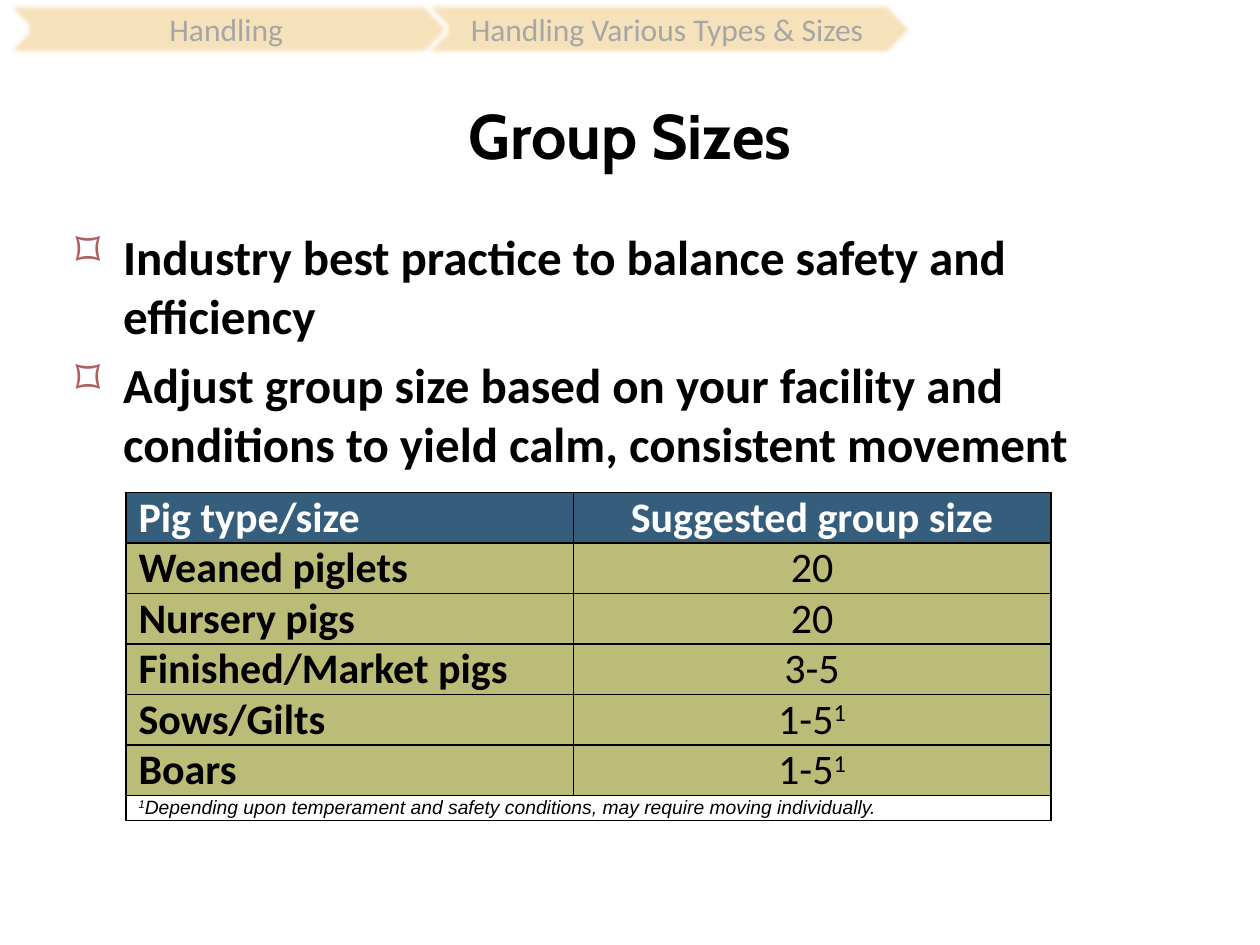
from lxml.etree import SubElement
from pptx import Presentation
from pptx.dml.color import RGBColor
from pptx.enum.shapes import MSO_SHAPE
from pptx.enum.text import MSO_ANCHOR, PP_ALIGN
from pptx.oxml.ns import qn
from pptx.util import Inches, Pt

COLORS = {
    "text": "000000",
    "header_text": "FFFFFF",
    "header": "355E7C",
    "body": "BBBC77",
    "note": "FFFFFF",
    "border": "000000",
    "bullet": "AF5F5D",
    "chevron": "F7E3BB",
    "chevron_text": "A6A6A6",
}

CHEVRONS = [
    ("Handling", 0, 3.59),
    ("Handling Various Types & Sizes", 3.33, 3.93),
]
BULLETS = [
    "Industry best practice to balance safety and efficiency",
    "Adjust group size based on your facility and "
    "conditions to yield calm, consistent movement",
]
HEADERS = ("Pig type/size", "Suggested group size")
GROUP_SIZES = [
    ("Weaned piglets", "20", ""),
    ("Nursery pigs", "20", ""),
    ("Finished/Market pigs", "3-5", ""),
    ("Sows/Gilts", "1-5", "1"),
    ("Boars", "1-5", "1"),
]
NOTE = "Depending upon temperament and safety conditions, may require moving individually."
COLUMN_WIDTHS = (3.55, 3.79)
ROW_HEIGHTS = (0.37, 0.4, 0.4, 0.4, 0.4, 0.4, 0.2)


def color(name):
    return RGBColor.from_string(COLORS[name])


def add_text(paragraph, text, size=24, font="Calibri", fill="text", bold=False,
             italic=False, superscript=False, align=PP_ALIGN.LEFT):
    paragraph.alignment = align
    run = paragraph.add_run()
    run.text = text
    run.font.size = Pt(size)
    run.font.name = font
    run.font.bold = bold
    run.font.italic = italic
    run.font.color.rgb = color(fill)
    if superscript:
        run.font._element.set("baseline", "30000")


def add_text_box(slide, left, top, width, height, anchor=MSO_ANCHOR.TOP):
    frame = slide.shapes.add_textbox(
        Inches(left), Inches(top), Inches(width), Inches(height)).text_frame
    frame.word_wrap = True
    frame.vertical_anchor = anchor
    return frame


def add_chevron(slide, text, left, width):
    shape = slide.shapes.add_shape(
        MSO_SHAPE.CHEVRON, Inches(left), Inches(0.03), Inches(width), Inches(0.4))
    shape.shadow.inherit = False
    effects = shape._element.spPr.find(qn("a:effectLst"))
    SubElement(effects, qn("a:softEdge"), rad=str(Pt(2.5)))
    shape.fill.solid()
    shape.fill.fore_color.rgb = color("chevron")
    shape.line.fill.background()
    frame = shape.text_frame
    frame.vertical_anchor = MSO_ANCHOR.MIDDLE
    add_text(frame.paragraphs[0], text, size=18, fill="chevron_text",
             align=PP_ALIGN.CENTER)


def add_bullet(paragraph):
    properties = paragraph._p.get_or_add_pPr()
    properties.set("marL", str(Inches(0.38)))
    properties.set("indent", str(-Inches(0.38)))
    bullet_color = SubElement(properties, qn("a:buClr"))
    SubElement(bullet_color, qn("a:srgbClr"), val=COLORS["bullet"])
    SubElement(properties, qn("a:buChar"), char="⌑")


def add_bullets(slide):
    frame = add_text_box(slide, 0.5, 1.75, 9, 4.95)
    for index, text in enumerate(BULLETS):
        paragraph = frame.add_paragraph() if index else frame.paragraphs[0]
        add_bullet(paragraph)
        if index:
            paragraph.space_before = Pt(5.6)
        add_text(paragraph, text, size=28, bold=True)


def format_cell(cell, fill):
    cell.margin_left = cell.margin_right = Inches(0.1)
    cell.margin_top = cell.margin_bottom = 0
    cell.vertical_anchor = MSO_ANCHOR.MIDDLE
    properties = cell._tc.get_or_add_tcPr()
    for side in ("lnL", "lnR", "lnT", "lnB"):
        line = SubElement(properties, qn(f"a:{side}"), w=str(Pt(1)))
        line_fill = SubElement(line, qn("a:solidFill"))
        SubElement(line_fill, qn("a:srgbClr"), val=COLORS["border"])
    cell.fill.solid()
    cell.fill.fore_color.rgb = color(fill)


def add_group_size_table(slide):
    table = slide.shapes.add_table(
        len(ROW_HEIGHTS), len(COLUMN_WIDTHS), Inches(1), Inches(3.91),
        Inches(sum(COLUMN_WIDTHS)), Inches(sum(ROW_HEIGHTS))).table
    for column, width in zip(table.columns, COLUMN_WIDTHS):
        column.width = Inches(width)
    for row, height in zip(table.rows, ROW_HEIGHTS):
        row.height = Inches(height)

    fills = ["header"] + ["body"] * len(GROUP_SIZES) + ["note"]
    for row, fill in zip(table.rows, fills):
        for cell in row.cells:
            format_cell(cell, fill)

    def paragraph_at(row, column):
        return table.cell(row, column).text_frame.paragraphs[0]

    for column, align in enumerate((PP_ALIGN.LEFT, PP_ALIGN.CENTER)):
        add_text(paragraph_at(0, column), HEADERS[column], fill="header_text",
                 bold=True, align=align)
    for row, (pig_type, group_size, mark) in enumerate(GROUP_SIZES, start=1):
        add_text(paragraph_at(row, 0), pig_type, bold=True)
        add_text(paragraph_at(row, 1), group_size, align=PP_ALIGN.CENTER)
        if mark:
            add_text(paragraph_at(row, 1), mark, superscript=True,
                     align=PP_ALIGN.CENTER)

    note_row = len(ROW_HEIGHTS) - 1
    table.cell(note_row, 0).merge(table.cell(note_row, 1))
    note = paragraph_at(note_row, 0)
    note_format = {"size": 11, "font": "Arial", "italic": True}
    add_text(note, "1", superscript=True, **note_format)
    add_text(note, NOTE, **note_format)


def main():
    presentation = Presentation()
    presentation.slide_width = Inches(10)
    presentation.slide_height = Inches(7.5)
    slide = presentation.slides.add_slide(presentation.slide_layouts[6])

    title = add_text_box(slide, 0.5, 0.59, 9, 0.96, anchor=MSO_ANCHOR.MIDDLE)
    add_text(title.paragraphs[0], "Group Sizes", size=36, font="Cabin", bold=True,
             align=PP_ALIGN.CENTER)
    add_bullets(slide)
    add_group_size_table(slide)
    for text, left, width in CHEVRONS:
        add_chevron(slide, text, left, width)

    presentation.save("out.pptx")


if __name__ == "__main__":
    main()
